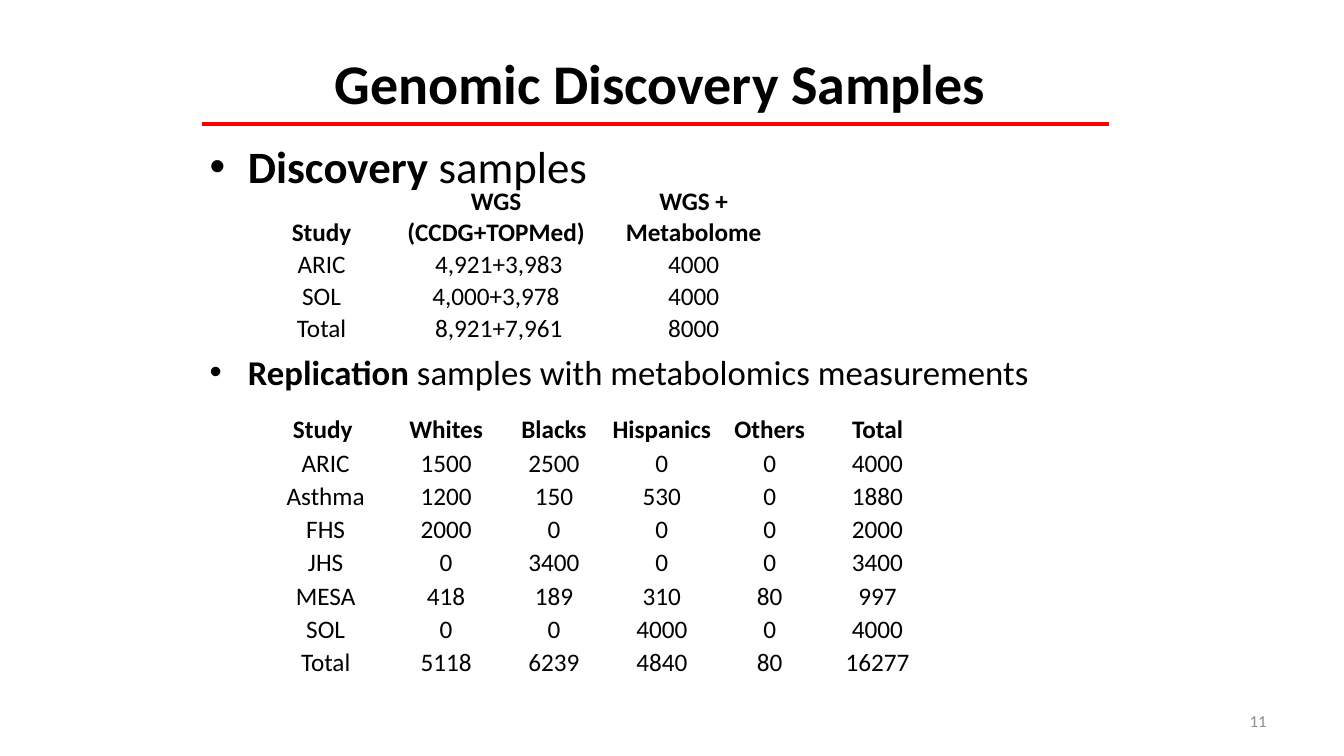
from lxml.etree import SubElement
from pptx import Presentation
from pptx.dml.color import RGBColor
from pptx.enum.shapes import MSO_CONNECTOR
from pptx.enum.text import MSO_ANCHOR, PP_ALIGN
from pptx.oxml.ns import qn
from pptx.util import Pt

PX = 9144
FONT = "Calibri"
COLORS = {"text": "000000", "rule": "FF0000", "number": "8C8C8C"}
NO_GRID = "{2D5ABB26-0587-4C30-8999-92F81FD0307C}"
WHITE_GRID = "{5C22544A-7EE6-4342-B048-85BDC9FD1C3A}"

DISCOVERY = [
    ["Study", "WGS\n(CCDG+TOPMed)", "WGS + Metabolome"],
    ["ARIC", " 4,921+3,983", "4000"],
    ["SOL", "4,000+3,978", "4000"],
    ["Total", " 8,921+7,961", "8000"],
]
REPLICATION = [
    ["Study ", "Whites", "Blacks", "Hispanics", "Others", "Total"],
    ["ARIC", "1500", "2500", "0", "0", "4000"],
    ["Asthma", "1200", "150", "530", "0", "1880"],
    ["FHS", "2000", "0", "0", "0", "2000"],
    ["JHS", "0", "3400", "0", "0", "3400"],
    ["MESA", "418", "189", "310", "80", "997"],
    ["SOL", "0", "0", "4000", "0", "4000"],
    ["Total", "5118", "6239", "4840", "80", "16277"],
]


def style(para, size, align=PP_ALIGN.LEFT, bold=False, color="text"):
    """Set the font and alignment of a paragraph."""
    para.alignment = align
    para.font.name = FONT
    para.font.size = Pt(size)
    para.font.bold = bold
    para.font.color.rgb = RGBColor.from_string(COLORS[color])


def add_text(page, box, text, size, anchor=MSO_ANCHOR.MIDDLE, **look):
    """Place a wrapped line of text in a box and return its paragraph."""
    frame = page.shapes.add_textbox(*(length * PX for length in box)).text_frame
    frame.word_wrap = True
    frame.vertical_anchor = anchor
    para = frame.paragraphs[0]
    para.text = text
    style(para, size, **look)
    return para


def add_heading(page, box):
    """Place the title and the rule that underlines it."""
    left, top, _, _ = box
    add_text(page, box, "Genomic Discovery Samples", 40, align=PP_ALIGN.CENTER, bold=True)
    start, level = left * PX, (top + 102) * PX
    rule = page.shapes.add_connector(
        MSO_CONNECTOR.STRAIGHT, start, level, start + 900 * PX, level)
    rule.line.color.rgb = RGBColor.from_string(COLORS["rule"])
    rule.line.width = Pt(2.5)
    SubElement(rule.element.spPr, qn("a:effectLst"))


def add_bullet(page, box, lead, rest, size):
    """Place a bullet line that opens with a bold word."""
    para = add_text(page, box, lead, size, MSO_ANCHOR.TOP)
    para.runs[0].font.bold = True
    para.add_run().text = rest
    properties = para._p.get_or_add_pPr()
    properties.set("marL", str(38 * PX))
    properties.set("indent", str(-38 * PX))
    bullet_font = properties.makeelement(qn("a:buFont"), {"typeface": "Arial"})
    bullet = properties.makeelement(qn("a:buChar"), {"char": "•"})
    properties[:0] = [bullet_font, bullet]


def add_samples(page, left, top, rows, widths, heights, grid, value_anchor):
    """Place a table of sample counts with a bold header row."""
    frame = page.shapes.add_table(
        len(rows), len(widths), left * PX, top * PX, sum(widths) * PX, sum(heights) * PX)
    table = frame.table
    table.first_row = table.horz_banding = False
    table._tbl.tblPr.find(qn("a:tableStyleId")).text = grid
    for column, width in zip(table.columns, widths):
        column.width = width * PX
    for index, (row, height) in enumerate(zip(table.rows, heights)):
        row.height = height * PX
        for position, (cell, text) in enumerate(zip(row.cells, rows[index])):
            cell.fill.background()
            cell.margin_left = cell.margin_right = cell.margin_top = PX
            cell.margin_bottom = 0
            is_value = index > 0 and position == 1
            cell.vertical_anchor = value_anchor if is_value else MSO_ANCHOR.BOTTOM
            cell.text = text
            for para in cell.text_frame.paragraphs:
                style(para, 18, PP_ALIGN.CENTER, bold=index == 0)


def main():
    """Build the slide and save it."""
    deck = Presentation()
    deck.slide_width, deck.slide_height = 1333 * PX, 750 * PX
    page = deck.slides.add_slide(deck.slide_layouts[6])
    add_text(page, (955, 695, 311, 40), "11", 12, align=PP_ALIGN.RIGHT, color="number")
    add_heading(page, (200, 21, 909, 120))
    add_bullet(page, (198, 133, 425, 79), "Discovery", " samples", 32)
    add_bullet(page, (198, 343, 875, 54), "Replication",
               " samples with metabolomics measurements", 24.8)
    add_samples(page, 246, 184, DISCOVERY, [146, 200, 192], [62] + [32] * 3,
                NO_GRID, MSO_ANCHOR.MIDDLE)
    add_samples(page, 257, 409, REPLICATION, [132] + [107] * 5, [33] * 8,
                WHITE_GRID, MSO_ANCHOR.BOTTOM)
    deck.save("out.pptx")


if __name__ == "__main__":
    main()
